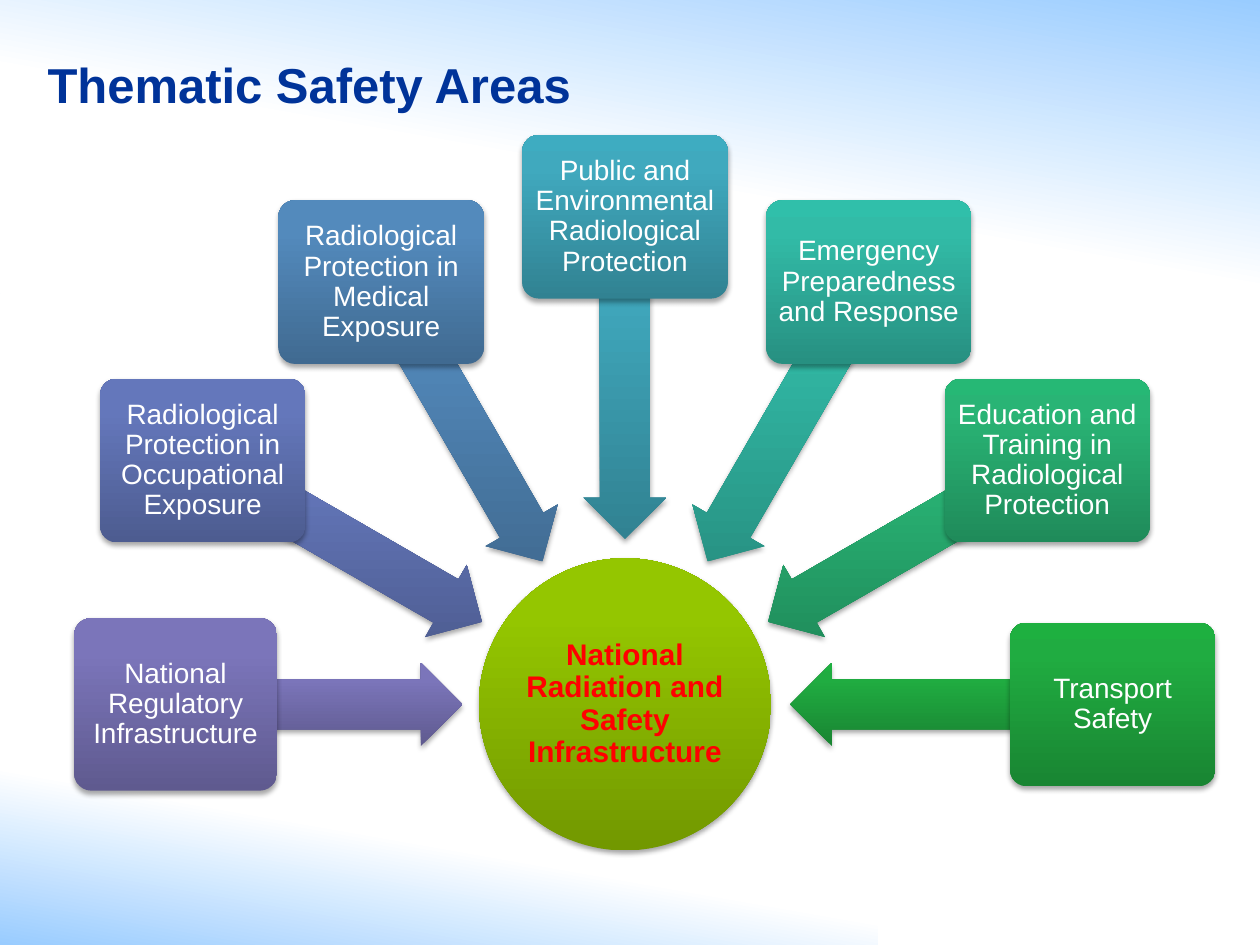
import math
from dataclasses import dataclass

import lxml.etree
import pptx
import pptx.dml.color
import pptx.enum.shapes
import pptx.enum.text
import pptx.oxml
import pptx.oxml.ns
import pptx.util

Cm = pptx.util.Cm
Pt = pptx.util.Pt
qn = pptx.oxml.ns.qn
RGB = pptx.dml.color.RGBColor.from_string
KIND = pptx.enum.shapes.MSO_SHAPE
ALIGN = pptx.enum.text.PP_ALIGN
ANCHOR = pptx.enum.text.MSO_ANCHOR


@dataclass(frozen=True)
class Theme:
    face: str = "Arial"
    navy: str = "003399"
    red: str = "FF0000"
    white: str = "FFFFFF"
    sky: str = "99CCFF"
    shade: str = "000000"
    lime: tuple = ("729800", "94C600", "95C700")
    head: int = 28
    core: int = 17
    body: int = 16


theme = Theme()

AREAS = [
    ("National Regulatory Infrastructure", ("5F5A8F", "7B75BA", "7B74BC")),
    ("Radiological Protection in Occupational Exposure", ("4D5C90", "6477BB", "6377BD")),
    ("Radiological Protection in Medical Exposure", ("406A91", "538ABC", "518BBF")),
    ("Public and Environmental Radiological Protection", ("318292", "40A9BE", "3EACC1")),
    ("Emergency Preparedness and Response", ("279081", "32BBA7", "30BFAA")),
    ("Education and Training in Radiological Protection", ("1F8B5A", "29B475", "26B875")),
    ("Transport Safety", ("198532", "20AC41", "1EB040")),
]


def draw(kind, mid, size, stops, angle, turn=0, shadow=True):
    """Add a borderless gradient shape centred on mid; lengths in cm."""
    (x, y), (w, h) = mid, size
    shape = slide.shapes.add_shape(kind, Cm(x - w / 2), Cm(y - h / 2), Cm(w), Cm(h))
    shape.rotation = turn
    shape.line.fill.background()
    shape.fill.gradient()
    shape.fill.gradient_angle = angle
    props = shape._element.spPr
    grad = props.find(qn("a:gradFill"))
    grad.set("rotWithShape", "0")
    ramp = grad.find(qn("a:gsLst"))
    for old in list(ramp):
        ramp.remove(old)
    for at, tint in stops:
        stop = lxml.etree.SubElement(ramp, qn("a:gs"), pos=str(at * 1000))
        lxml.etree.SubElement(stop, qn("a:srgbClr"), val=tint)
    shape.shadow.inherit = False
    if shadow:
        cast = lxml.etree.SubElement(
            props.find(qn("a:effectLst")), qn("a:outerShdw"),
            blurRad=str(Pt(3.1)), dist=str(Pt(1.8)), dir="5400000", rotWithShape="0")
        tone = lxml.etree.SubElement(cast, qn("a:srgbClr"), val=theme.shade)
        lxml.etree.SubElement(tone, qn("a:alpha"), val="35000")
    return shape


def write(shape, text, size, tint, bold=False, inset=None, align=ALIGN.CENTER, space=0.9):
    frame = shape.text_frame
    form = {"word_wrap": True, "vertical_anchor": ANCHOR.MIDDLE}
    if inset is not None:
        form.update({"margin_" + side: Cm(inset) for side in ("left", "right", "top", "bottom")})
    for key, value in form.items():
        setattr(frame, key, value)
    para = frame.paragraphs[0]
    para.text = text
    for key, value in {"alignment": align, "line_spacing": space}.items():
        setattr(para, key, value)
    for key, value in {"name": theme.face, "size": Pt(size), "bold": bold}.items():
        setattr(para.font, key, value)
    para.font.color.rgb = RGB(tint)


deck = pptx.Presentation()
deck.slide_width, deck.slide_height = Cm(25.4), Cm(19.05)
slide = deck.slides.add_slide(deck.slide_layouts[6])

# Corner washes: bottom left, then top right
for mid, size, fade, angle in [
    ((8.85, 16.89), (17.7, 4.32), 48, 80),
    ((12.7, 2.96), (25.4, 5.92), 56, 260),
]:
    draw(KIND.RECTANGLE, mid, size, [(0, theme.sky), (fade, theme.white)],
         (angle + 0) % 360, shadow=False)

# Hub
hub = (12.6, 14.2)
core = draw(KIND.OVAL, hub, (5.89, 5.89), zip((0, 80, 100), theme.lime), 90)
write(core, "National Radiation and Safety Infrastructure", theme.core, theme.red,
      bold=True, inset=0.03)

# Areas on a half circle around the hub, each with an arrow pointing inwards
for i, (text, tints) in enumerate(AREAS):
    turn = (180 + 30 * i) % 360
    cos, sin = math.cos(math.radians(turn)), math.sin(math.radians(turn))
    first = i == 0
    reach, span = (6.16, 5.77) if first else (6.58, 6.5)
    far, size = (9.06, (4.09, 3.48)) if first else (9.83, (4.14, 3.3))
    stops = list(zip((0, 80, 100), tints))

    arrow = draw(KIND.LEFT_ARROW, (hub[0] + reach * cos, hub[1] + reach * sin),
                 (span, 1.68), stops, 90, turn)
    arrow.adjustments[0], arrow.adjustments[1] = 0.6, 0.5

    box = draw(KIND.ROUNDED_RECTANGLE, (hub[0] + far * cos, hub[1] + far * sin),
               size, stops, 90)
    box.adjustments[0] = 0.1
    write(box, text, theme.body, theme.white, inset=0.08)

# Title
title = slide.shapes.add_textbox(Cm(0.71), Cm(0.33), Cm(24.2), Cm(2.72))
write(title, "Thematic Safety Areas", theme.head, theme.navy, bold=True,
      align=ALIGN.LEFT, space=1.0)

deck.save("out.pptx")
